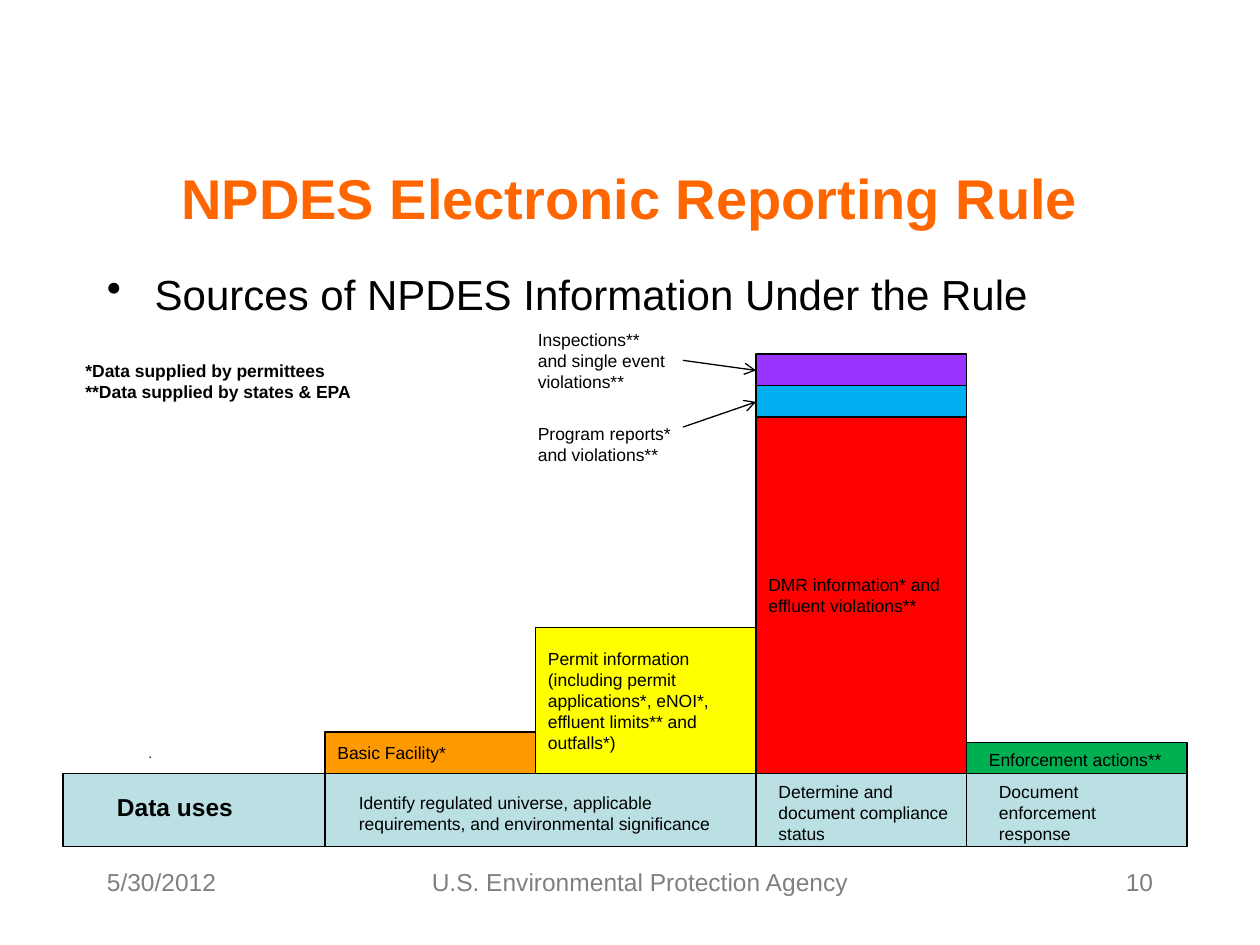
from lxml import etree
from pptx import Presentation
from pptx import util as u
from pptx.dml.color import RGBColor
from pptx.enum import shapes, text
from pptx.oxml import ns

COLORS = {
    "title": "FF6600", "black": "000000", "gray": "808080", "page": "7F7F7F",
    "band": "BBE0E3", "facility": "FF9900", "permit": "FFFF00",
    "program": "00B0F0", "enforcement": "00B050", "inspection": "9933FF",
    "dmr": "FF0000",
}
ALIGN = text.PP_ALIGN
ANCHOR = text.MSO_ANCHOR


def rgb(name):
    """Return the named palette colour."""
    return RGBColor.from_string(COLORS[name])


def write(sp, words, size=10, color="black", bold=False, align=ALIGN.LEFT,
          anchor=ANCHOR.TOP, wrap=True, bullet=False):
    """Fill a shape with one formatted paragraph per line of words."""
    tf = sp.text_frame
    tf.word_wrap = wrap
    tf.vertical_anchor = anchor
    for i, line in enumerate(words.split("\n")):
        p = tf.paragraphs[0] if i == 0 else tf.add_paragraph()
        if bullet:
            pPr = p._p.get_or_add_pPr()
            pPr.set("marL", str(u.Inches(0.38)))
            pPr.set("indent", str(-u.Inches(0.38)))
            etree.SubElement(pPr, ns.qn("a:buChar")).set("char", "•")
        p.alignment = align
        r = p.add_run()
        r.text = line
        r.font.name = "Arial"
        r.font.size = u.Pt(size)
        r.font.bold = bold
        r.font.color.rgb = rgb(color)
    return tf


def add_text(s, x, y, w, h, words, **fmt):
    """Add a text box and return its text frame."""
    sp = s.shapes.add_textbox(*map(u.Inches, (x, y, w, h)))
    return write(sp, words, **fmt)


def add_block(s, x, y, w, h, fill, words=""):
    """Add an outlined rectangle with an optional label."""
    sp = s.shapes.add_shape(shapes.MSO_SHAPE.RECTANGLE,
                            *map(u.Inches, (x, y, w, h)))
    sp.shadow.inherit = False
    sp.fill.solid()
    sp.fill.fore_color.rgb = rgb(fill)
    sp.line.color.rgb = rgb("black")
    sp.line.width = u.Pt(0.75)
    if words:
        write(sp, words, anchor=ANCHOR.MIDDLE)


def add_line(s, x1, y1, x2, y2, arrow=False):
    """Add a thin black line, with an open arrowhead if asked."""
    c = s.shapes.add_connector(shapes.MSO_CONNECTOR.STRAIGHT,
                               *map(u.Inches, (x1, y1, x2, y2)))
    c.line.color.rgb = rgb("black")
    c.line.width = u.Pt(0.75)
    if arrow:
        ln = c.line._get_or_add_ln()
        etree.SubElement(ln, ns.qn("a:tailEnd")).set("type", "arrow")
    etree.SubElement(c._element.spPr, ns.qn("a:effectLst"))


def add_heading(s, x, y, w):
    """Place the title and the bulleted subtitle."""
    add_text(s, x, y, w, 0.63, "NPDES Electronic Reporting Rule", size=32,
             color="title", bold=True, align=ALIGN.CENTER, anchor=ANCHOR.MIDDLE)
    add_text(s, x, y + 0.83, w, 3.75,
             "Sources of NPDES Information Under the Rule", size=24, bullet=True)


def add_uses(s, x, y, w, h):
    """Place the band of data uses with its dividers and labels."""
    add_block(s, x, y, w, h, "band")
    for dx in (2.08, 5.5, 7.17):
        add_line(s, x + dx, y, x + dx, y + h)
    add_text(s, x + 0.33, y + 0.09, 1.67, 0.34, "Data uses", size=14,
             bold=True, anchor=ANCHOR.MIDDLE)
    uses = [
        (2.25, 0.09, 3.25, 0.44, "Identify regulated universe, applicable "
         "requirements, and environmental significance"),
        (5.58, 0, 1.58, 0.61, "Determine and document compliance status"),
        (7.33, 0, 1.33, 0.61, "Document enforcement response"),
    ]
    for dx, dy, bw, bh, words in uses:
        add_text(s, x + dx, y + dy, bw, bh, words, anchor=ANCHOR.MIDDLE)


def add_columns(s, x, base):
    """Stand the information blocks on the base line."""
    blocks = [
        (0, 0, 1.67, 0.33, "facility", "Basic Facility*"),
        (1.67, 0, 1.75, 1.16, "permit", "Permit information (including permit "
         "applications*, eNOI*, effluent limits** and outfalls*)"),
        (3.42, 2.83, 1.67, 0.25, "program", ""),
        (5.09, 0, 1.75, 0.25, "enforcement", ""),
        (3.42, 3.08, 1.67, 0.25, "inspection", ""),
        (3.42, 0, 1.67, 2.83, "dmr",
         "DMR information* and effluent violations**"),
    ]
    for dx, lift, w, h, fill, words in blocks:
        add_block(s, x + dx, base - lift - h, w, h, fill, words)
    add_text(s, x + 5.17, base - 0.25, 1.58, 0.27, "Enforcement actions**",
             anchor=ANCHOR.MIDDLE, wrap=False)


def add_callouts(s, x, y):
    """Place the two labels with arrows to the top of the tall column."""
    add_text(s, x, y, 1.25, 0.61,
             "Inspections** and single event violations**")
    add_text(s, x, y + 0.75, 1.42, 0.44, "Program reports* and violations**")
    for start, end in ((0.3, 0.38), (0.83, 0.63)):
        add_line(s, x + 1.25, y + start, x + 1.83, y + end, arrow=True)


def add_notes_key(s, x, y):
    """Place the key to the asterisks and the lone dot."""
    add_text(s, x, y, 2.5, 0.44, "*Data supplied by permittees\n"
             "**Data supplied by states & EPA", bold=True)
    tf = add_text(s, x + 0.5, y + 2.86, 8, 0.51, ".", size=8,
                  anchor=ANCHOR.BOTTOM)
    tf.margin_bottom = u.Inches(0.14)


def add_footer(s, x, y, w):
    """Place the page number, agency and date."""
    add_text(s, x + w - 2.08, y, 2.08, 0.5, "10", size=14, color="page",
             align=ALIGN.RIGHT)
    add_text(s, x + 1.33, y, 6, 0.5, "U.S. Environmental Protection Agency",
             size=14, color="gray", align=ALIGN.CENTER)
    add_text(s, x, y, 2.08, 0.5, "5/30/2012", size=14, color="gray")


def main():
    """Build and save the slide."""
    prs = Presentation()
    prs.slide_width, prs.slide_height = u.Inches(10), u.Inches(7.5)
    s = prs.slides.add_slide(prs.slide_layouts[6])
    add_heading(s, 0.75, 1.25, 8.5)
    add_footer(s, 0.75, 6.83, 8.5)
    add_uses(s, 0.5, 6.14, 8.92, 0.58)
    add_columns(s, 2.58, 6.14)
    add_callouts(s, 4.17, 2.56)
    add_notes_key(s, 0.58, 2.81)
    prs.save("out.pptx")


if __name__ == "__main__":
    main()
